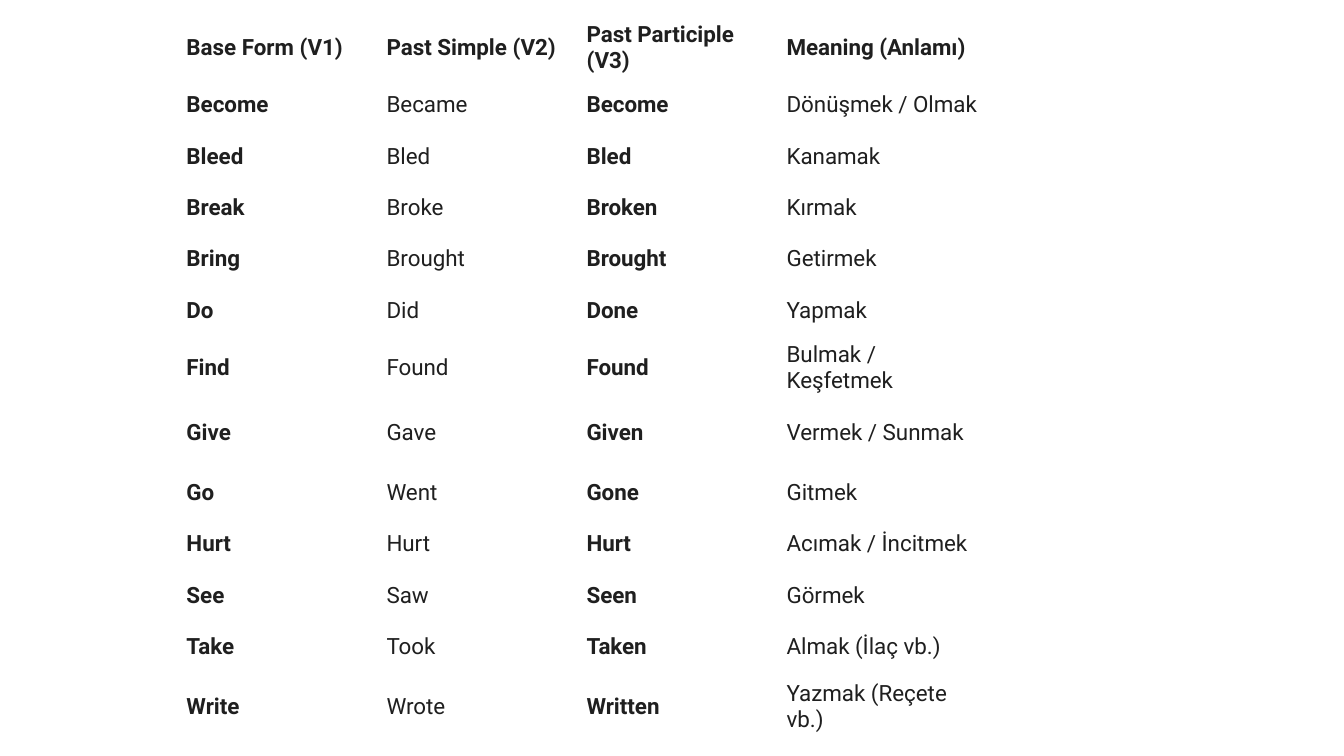
import pptx
import pptx.util
import pptx.dml.color
import pptx.enum.dml
import pptx.enum.text
import pptx.oxml
import pptx.oxml.ns

Inches = pptx.util.Inches
Pt = pptx.util.Pt
INK = pptx.dml.color.RGBColor(0x1F, 0x1F, 0x1F)
WHITE = pptx.dml.color.RGBColor(0xFF, 0xFF, 0xFF)
FONT = "Roboto"

verbs = [
    ("Base Form (V1)", "Past Simple (V2)", "Past Participle (V3)", "Meaning (Anlamı)"),
    ("Become", "Became", "Become", "Dönüşmek / Olmak"),
    ("Bleed", "Bled", "Bled", "Kanamak"),
    ("Break", "Broke", "Broken", "Kırmak"),
    ("Bring", "Brought", "Brought", "Getirmek"),
    ("Do", "Did", "Done", "Yapmak"),
    ("Find", "Found", "Found", "Bulmak / Keşfetmek"),
    ("Give", "Gave", "Given", "Vermek / Sunmak"),
    ("Go", "Went", "Gone", "Gitmek"),
    ("Hurt", "Hurt", "Hurt", "Acımak / İncitmek"),
    ("See", "Saw", "Seen", "Görmek"),
    ("Take", "Took", "Taken", "Almak (İlaç vb.)"),
    ("Write", "Wrote", "Written", "Yazmak (Reçete vb.)"),
]
cols = 5
high = {0: 0.49, 7: 0.68, 12: 0.68}


def put(cell, text, size=16, bold=False, color=INK, top=0.05):
    cell.margin_left = cell.margin_right = Inches(0.04)
    cell.margin_top = Inches(top)
    cell.margin_bottom = Inches(0.05)
    cell.vertical_anchor = pptx.enum.text.MSO_ANCHOR.MIDDLE
    run = cell.text_frame.paragraphs[0].add_run()
    run.text = text
    run.font.name = FONT
    run.font.size = Pt(size)
    run.font.bold = bold
    run.font.color.rgb = color


def edge(cell):
    props = cell._tc.get_or_add_tcPr()
    for spot, side in enumerate(("lnL", "lnR", "lnT", "lnB")):
        line = pptx.oxml.parse_xml(
            f'<a:{side} {pptx.oxml.ns.nsdecls("a")} w="{Pt(0.6)}">'
            f'<a:solidFill><a:srgbClr val="{WHITE}"/></a:solidFill></a:{side}>'
        )
        props.insert(spot, line)


deck = pptx.Presentation()
deck.slide_width = Inches(13.33)
deck.slide_height = Inches(7.5)
slide = deck.slides.add_slide(deck.slide_layouts[6])

frame = slide.shapes.add_table(
    len(verbs), cols, Inches(1.81), Inches(0.18), Inches(9.92), Inches(6.9)
)
table = frame.table
table.first_row = False
table.horz_banding = False

for col in table.columns:
    col.width = Inches(9.92 / cols)
for r, row in enumerate(table.rows):
    row.height = Inches(high.get(r, 0.51))
    for c, cell in enumerate(row.cells):
        cell.fill.background()
        edge(cell)
        if c < len(verbs[r]):
            put(cell, verbs[r][c], bold=r == 0 or c % 2 == 0, top=0.05 if r else 0.04)

deck.save("out.pptx")
